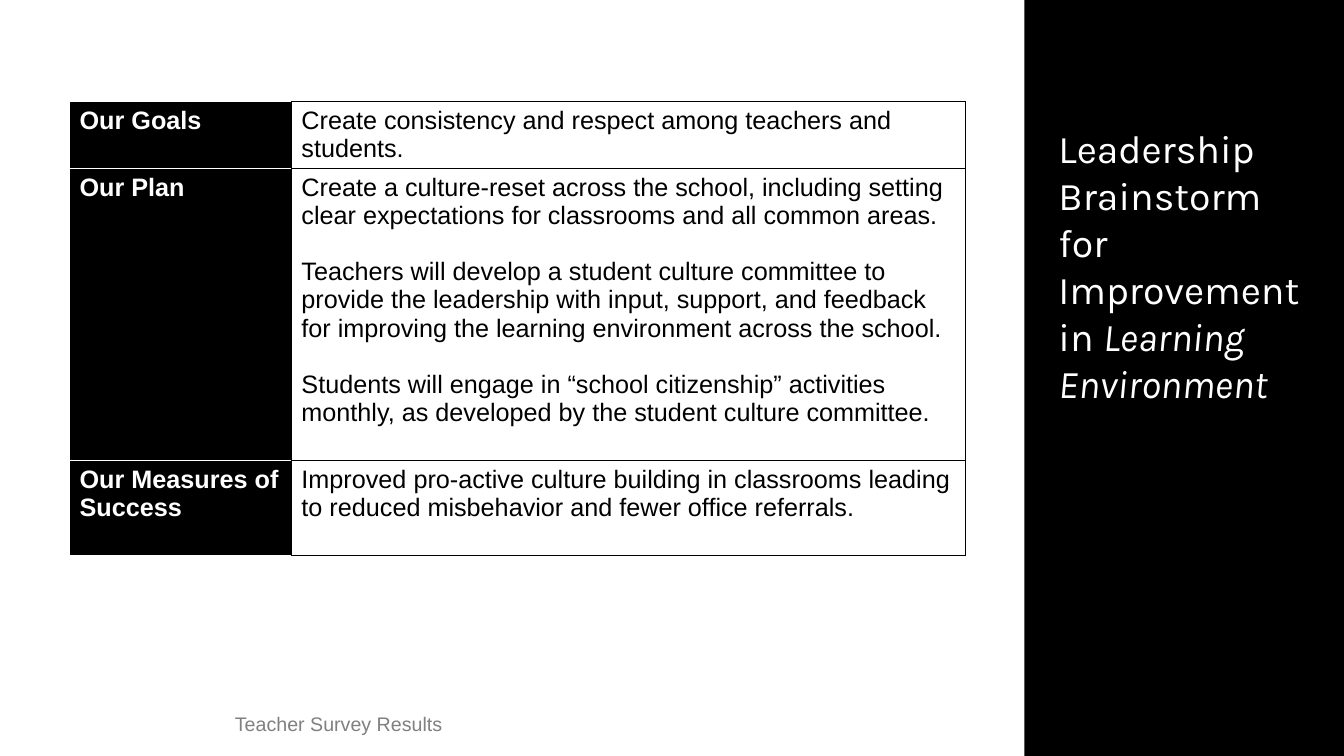
import pptx
import pptx.dml.color
import pptx.enum.shapes
import pptx.oxml
import pptx.oxml.ns
import pptx.util

EMU_PER_PX = 9144  # 100 px to the inch


def px(n):
    return pptx.util.Emu(n * EMU_PER_PX)


def add_run(p, text, size, color, font="Arial", bold=False, italic=False):
    r = p.add_run()
    r.text = text
    r.font.size = pptx.util.Pt(size)
    r.font.name = font
    r.font.bold = bold
    r.font.italic = italic
    r.font.color.rgb = pptx.dml.color.RGBColor.from_string(color)


prs = pptx.Presentation()
prs.slide_width, prs.slide_height = px(1333), px(750)
s = prs.slides.add_slide(prs.slide_layouts[6])

# Side panel
panel = s.shapes.add_shape(pptx.enum.shapes.MSO_SHAPE.RECTANGLE, px(1016), 0, px(317), px(750))
panel.shadow.inherit = False
panel.fill.solid()
panel.fill.fore_color.rgb = pptx.dml.color.RGBColor.from_string("000000")
panel.line.fill.background()

# Title
tf = s.shapes.add_textbox(px(1040), px(118), px(264), px(293)).text_frame
tf.word_wrap = True
p = tf.paragraphs[0]
add_run(p, "Leadership Brainstorm for Improvement in ", 28, "FFFFFF", "Karla")
add_run(p, "Learning Environment", 28, "FFFFFF", "Karla", italic=True)

# Footer
tf = s.shapes.add_textbox(px(233), px(706), px(609), px(20)).text_frame
tf.word_wrap = True
tf.margin_left = tf.margin_top = tf.margin_right = tf.margin_bottom = 0
add_run(tf.paragraphs[0], "Teacher Survey Results", 14, "808080")

# Plan table: label, paragraphs, row height
rows = [
    ("Our Goals", ["Create consistency and respect among teachers and students."], 66),
    ("Our Plan", [
        "Create a culture-reset across the school, including setting clear expectations "
        "for classrooms and all common areas.",
        "Teachers will develop a student culture committee to provide the leadership with input, "
        "support, and feedback for improving the learning environment across the school.",
        "Students will engage in “school citizenship” activities monthly, as developed by "
        "the student culture committee.",
    ], 290),
    ("Our Measures of Success", [
        "Improved pro-active culture building in classrooms leading to reduced misbehavior "
        "and fewer office referrals.",
    ], 94),
]
# Text colour, fill, then left, right, top and bottom border colours
columns = [
    ("FFFFFF", "000000", ["FFFFFF", "000000", "FFFFFF", "FFFFFF"]),
    ("000000", "FFFFFF", ["000000"] * 4),
]
total = sum(height for _, _, height in rows)
table = s.shapes.add_table(len(rows), 2, px(69), px(101), px(889), px(total)).table
table.columns[0].width, table.columns[1].width = px(220), px(669)

for i, (label, paragraphs, height) in enumerate(rows):
    table.rows[i].height = px(height)
    for j, texts in enumerate([[label], paragraphs]):
        color, fill, borders = columns[j]
        cell = table.cell(i, j)
        cell.margin_bottom = 0
        for k, text in enumerate(texts):
            p = cell.text_frame.paragraphs[0] if k == 0 else cell.text_frame.add_paragraph()
            if k:
                p.space_before = pptx.util.Pt(20)
            add_run(p, text, 18, color, bold=j == 0)
        # Borders come before the fill in the cell properties
        tcPr = cell._tc.get_or_add_tcPr()
        for side, border in zip("LRTB", borders):
            tcPr.append(pptx.oxml.parse_xml(
                f'<a:ln{side} {pptx.oxml.ns.nsdecls("a")} w="12700"><a:solidFill>'
                f'<a:srgbClr val="{border}"/></a:solidFill></a:ln{side}>'))
        cell.fill.solid()
        cell.fill.fore_color.rgb = pptx.dml.color.RGBColor.from_string(fill)

prs.save("out.pptx")
